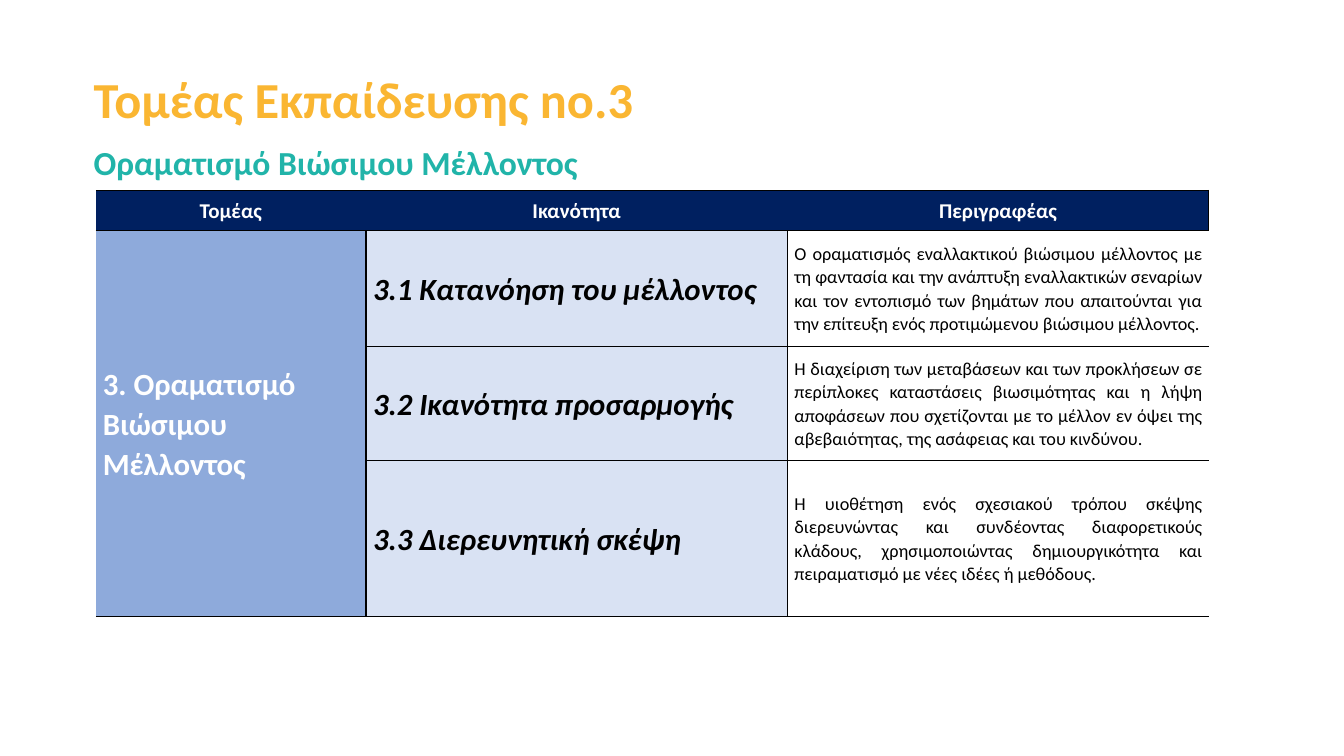
"""Build a slide with a training-area title and its competency table."""
from lxml import etree
from pptx import Presentation
from pptx.dml.color import RGBColor
from pptx.enum.text import MSO_ANCHOR, PP_ALIGN
from pptx.oxml.ns import qn
from pptx.util import Inches, Pt

LEFT, CENTER, JUSTIFY = PP_ALIGN.LEFT, PP_ALIGN.CENTER, PP_ALIGN.JUSTIFY
MIDDLE = MSO_ANCHOR.MIDDLE
FONT = "Calibri"
WHITE, BLACK = "FFFFFF", "000000"

HEADINGS = [
    ("Τομέας Εκπαίδευσης no.3", (0.83, 0.63, 8.98, 0.71), 36, "FAB632"),
    ("Οραματισμό Βιώσιμου Μέλλοντος", (0.83, 1.36, 8.41, 0.5), 24, "21B4A9"),
]
HEADER = ["Τομέας", "Ικανότητα", "Περιγραφέας"]
DOMAIN = "3. Οραματισμό Βιώσιμου Μέλλοντος"
COMPETENCIES = [
    ("3.1 Κατανόηση του μέλλοντος",
     "Ο οραματισμός εναλλακτικού βιώσιμου μέλλοντος με τη φαντασία και την ανάπτυξη "
     "εναλλακτικών σεναρίων και τον εντοπισμό των βημάτων που απαιτούνται για την "
     "επίτευξη ενός προτιμώμενου βιώσιμου μέλλοντος."),
    ("3.2 Ικανότητα προσαρμογής",
     "Η διαχείριση των μεταβάσεων και των προκλήσεων σε περίπλοκες καταστάσεις "
     "βιωσιμότητας και η λήψη αποφάσεων που σχετίζονται με το μέλλον εν όψει της "
     "αβεβαιότητας, της ασάφειας και του κινδύνου."),
    ("3.3 Διερευνητική σκέψη",
     "Η υιοθέτηση ενός σχεσιακού τρόπου σκέψης διερευνώντας και συνδέοντας "
     "διαφορετικούς κλάδους, χρησιμοποιώντας δημιουργικότητα και πειραματισμό με νέες "
     "ιδέες ή μεθόδους."),
]
TABLE_LEFT, TABLE_TOP = 0.95, 1.89
COLUMN_WIDTHS = [2.68, 4.18, 4.18]
HEADER_HEIGHT = 0.4
ROW_HEIGHTS = [1.15, 1.13, 1.55]

# Each style: size, colour, bold, italic, alignment, fill, bordered sides
HEADER_STYLES = [(15, WHITE, True, False, CENTER, "002060", sides) for sides in ("TB", "TB", "TBR")]
BODY_STYLES = [
    (22, WHITE, True, False, LEFT, "8EAADB", "RTB"),
    (22, BLACK, True, True, JUSTIFY, "D9E2F3", "LRTB"),
    (13, BLACK, False, False, JUSTIFY, None, "LTB"),
]


def color(value):
    return RGBColor.from_string(value)


def format_text(paragraph, size, text_color, bold=True, italic=False):
    for run in paragraph.runs:
        font = run.font
        font.name, font.size, font.bold, font.italic = FONT, Pt(size), bold, italic
        font.color.rgb = color(text_color)


def add_heading(slide, text, box, size, text_color):
    shape = slide.shapes.add_textbox(*map(Inches, box))
    shape.text_frame.word_wrap = True
    shape.text_frame.text = text
    format_text(shape.text_frame.paragraphs[0], size, text_color)


def set_borders(cell, sides):
    properties = cell._tc.get_or_add_tcPr()
    for side in "LRTB":
        line = etree.SubElement(properties, qn(f"a:ln{side}"), w=str(Pt(1)))
        if side in sides:
            fill = etree.SubElement(line, qn("a:solidFill"))
            etree.SubElement(fill, qn("a:srgbClr"), val=BLACK)
        else:
            etree.SubElement(line, qn("a:noFill"))


def fill_cell(cell, text, style):
    size, text_color, bold, italic, alignment, fill, sides = style
    cell.margin_left = cell.margin_right = Inches(0.07)
    cell.margin_top = cell.margin_bottom = 0
    cell.vertical_anchor = MIDDLE
    cell.text_frame.text = text
    paragraph = cell.text_frame.paragraphs[0]
    paragraph.alignment, paragraph.line_spacing = alignment, 1.06
    format_text(paragraph, size, text_color, bold, italic)
    set_borders(cell, sides)
    if fill:
        cell.fill.solid()
        cell.fill.fore_color.rgb = color(fill)
    else:
        cell.fill.background()


def add_grid(slide, top, heights, rows, styles):
    frame = slide.shapes.add_table(
        len(rows), len(COLUMN_WIDTHS), Inches(TABLE_LEFT), Inches(top),
        Inches(sum(COLUMN_WIDTHS)), Inches(sum(heights)))
    table = frame.table
    table.first_row = table.horz_banding = False
    for column, width in zip(table.columns, COLUMN_WIDTHS):
        column.width = Inches(width)
    for row, height, texts in zip(table.rows, heights, rows):
        row.height = Inches(height)
        for cell, text, style in zip(row.cells, texts, styles):
            fill_cell(cell, text, style)
    return table


def main():
    presentation = Presentation()
    presentation.slide_width, presentation.slide_height = Inches(13.33), Inches(7.5)
    slide = presentation.slides.add_slide(presentation.slide_layouts[6])
    for heading in HEADINGS:
        add_heading(slide, *heading)
    add_grid(slide, TABLE_TOP, [HEADER_HEIGHT], [HEADER], HEADER_STYLES)
    body_rows = [(DOMAIN if index == 0 else "", *competency)
                 for index, competency in enumerate(COMPETENCIES)]
    body = add_grid(slide, TABLE_TOP + HEADER_HEIGHT, ROW_HEIGHTS, body_rows, BODY_STYLES)
    body.cell(0, 0).merge(body.cell(len(body_rows) - 1, 0))
    presentation.save("out.pptx")


if __name__ == "__main__":
    main()
